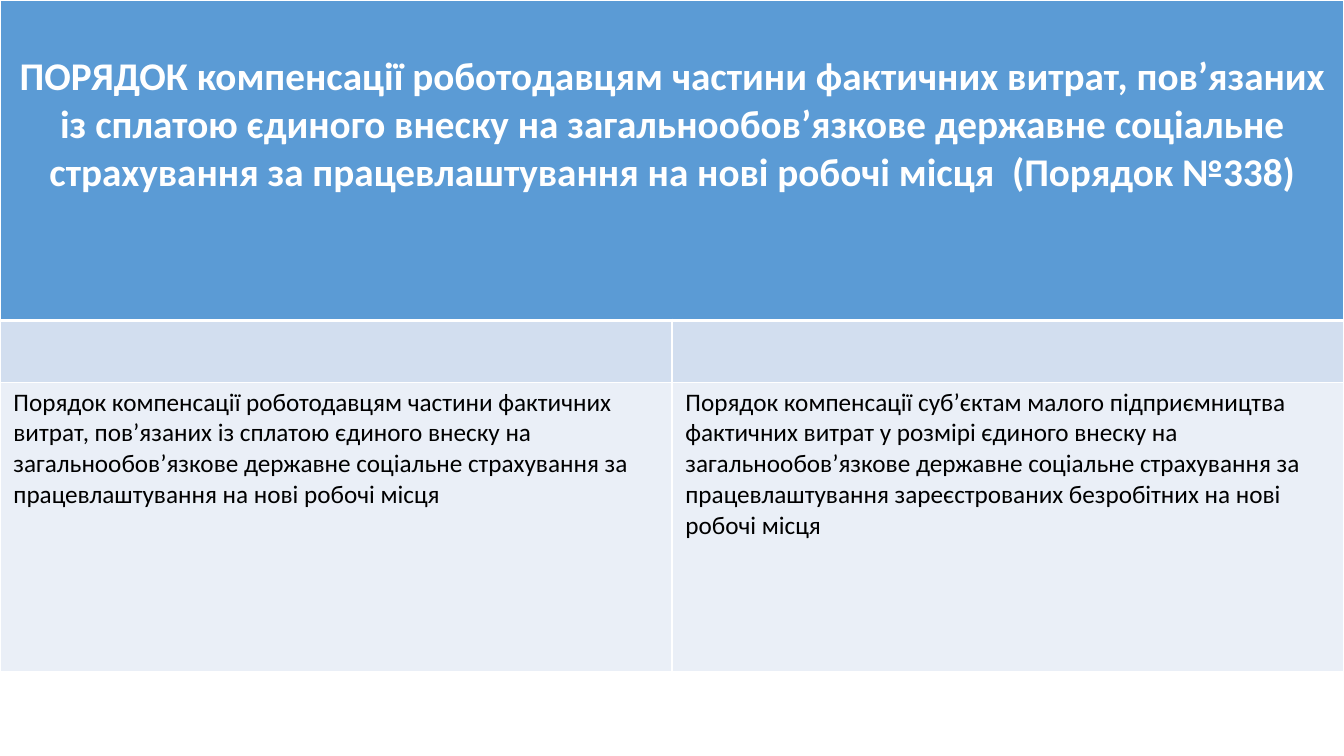
from dataclasses import dataclass

from lxml.etree import SubElement
from pptx import Presentation
from pptx.dml.color import RGBColor
from pptx.enum.text import PP_ALIGN
from pptx.oxml.ns import qn
from pptx.util import Pt


@dataclass(frozen=True)
class Theme:
    font: str = "Calibri"
    head: str = "5B9BD5"
    band: str = "D2DEEF"
    body: str = "EAEFF7"
    light: str = "FFFFFF"
    dark: str = "000000"
    title: int = 28
    text: int = 18


theme = Theme()


def write(cell, text, size=theme.text, color=theme.dark, bold=False,
          align=PP_ALIGN.LEFT, top=3.6):
    cell.margin_left = cell.margin_right = Pt(9.6)
    cell.margin_top, cell.margin_bottom = Pt(top), Pt(3.6)
    par = cell.text_frame.paragraphs[0]
    par.alignment = align
    run = par.add_run()
    run.text = text
    font = run.font
    font.name, font.size, font.bold = theme.font, Pt(size), bold
    font.color.rgb = RGBColor.from_string(color)


def paint(cell, color, edges):
    """Give the cell its border widths (left, right, top, bottom) and fill."""
    props = cell._tc.get_or_add_tcPr()
    for side, width in zip("LRTB", edges):
        line = SubElement(props, qn(f"a:ln{side}"), w=str(Pt(width)))
        fill = SubElement(line, qn("a:solidFill"))
        SubElement(fill, qn("a:srgbClr"), val=theme.light)
    cell.fill.solid()
    cell.fill.fore_color.rgb = RGBColor.from_string(color)


deck = Presentation()
deck.slide_width, deck.slide_height = Pt(960), Pt(540)
slide = deck.slides.add_slide(deck.slide_layouts[6])

table = slide.shapes.add_table(3, 2, 0, 0, Pt(960), Pt(480)).table
table.first_row = table.horz_banding = False
for col in table.columns:
    col.width = Pt(480)

rows = [
    (229, theme.head, (1, 1, 1, 3)),
    (44, theme.band, (1, 1, 3, 1)),
    (207, theme.body, (1, 1, 1, 1)),
]
for row, (height, color, edges) in zip(table.rows, rows):
    row.height = Pt(height)
    for cell in row.cells:
        paint(cell, color, edges)

title = table.cell(0, 0)
title.merge(table.cell(0, 1))
write(
    title,
    "ПОРЯДОК компенсації роботодавцям частини фактичних витрат, пов’язаних "
    "із сплатою єдиного внеску на загальнообов’язкове державне соціальне "
    "страхування за працевлаштування на нові робочі місця  (Порядок №338)",
    size=theme.title, color=theme.light, bold=True,
    align=PP_ALIGN.CENTER, top=38,
)

orders = [
    "Порядок компенсації роботодавцям частини фактичних витрат, пов’язаних "
    "із сплатою єдиного внеску на загальнообов’язкове державне соціальне "
    "страхування за працевлаштування на нові робочі місця",
    "Порядок компенсації суб’єктам малого підприємництва фактичних витрат "
    "у розмірі єдиного внеску на загальнообов’язкове державне соціальне "
    "страхування за працевлаштування зареєстрованих безробітних на нові "
    "робочі місця",
]
for col, text in enumerate(orders):
    write(table.cell(2, col), text)

deck.save("out.pptx")
